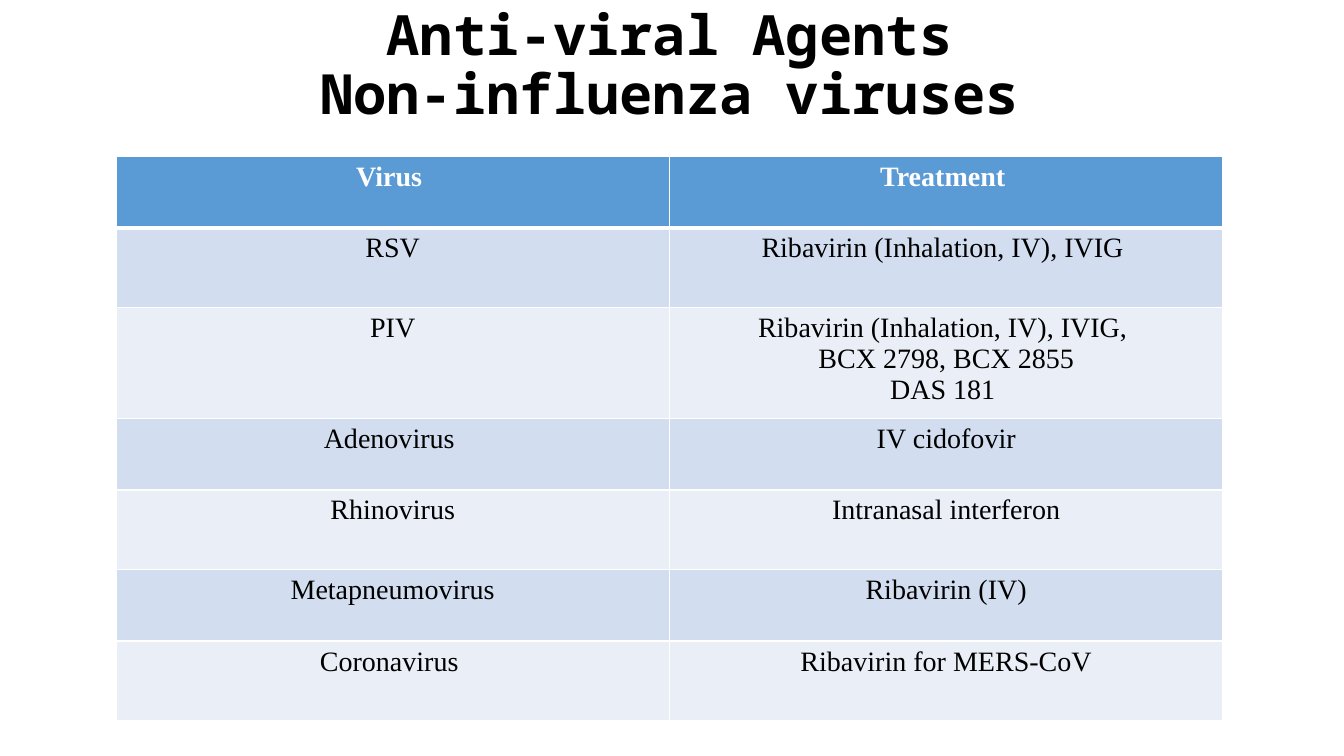
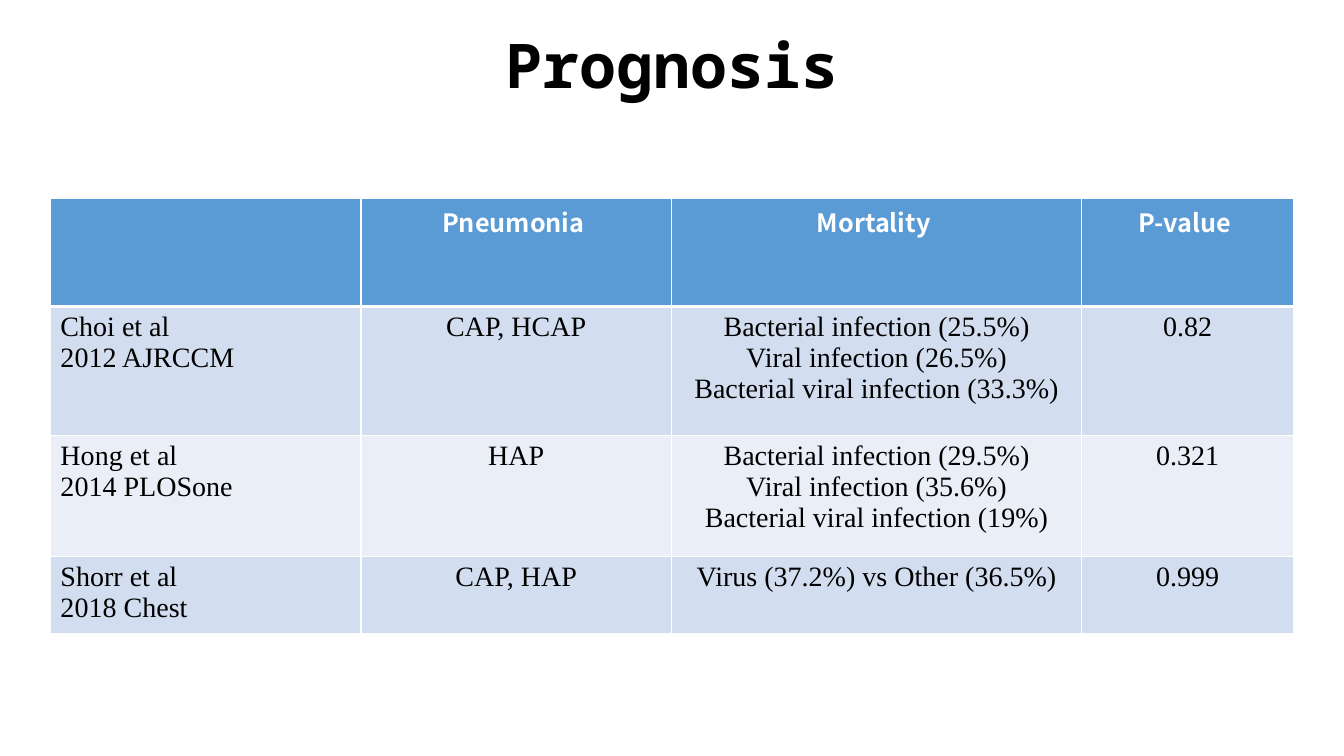
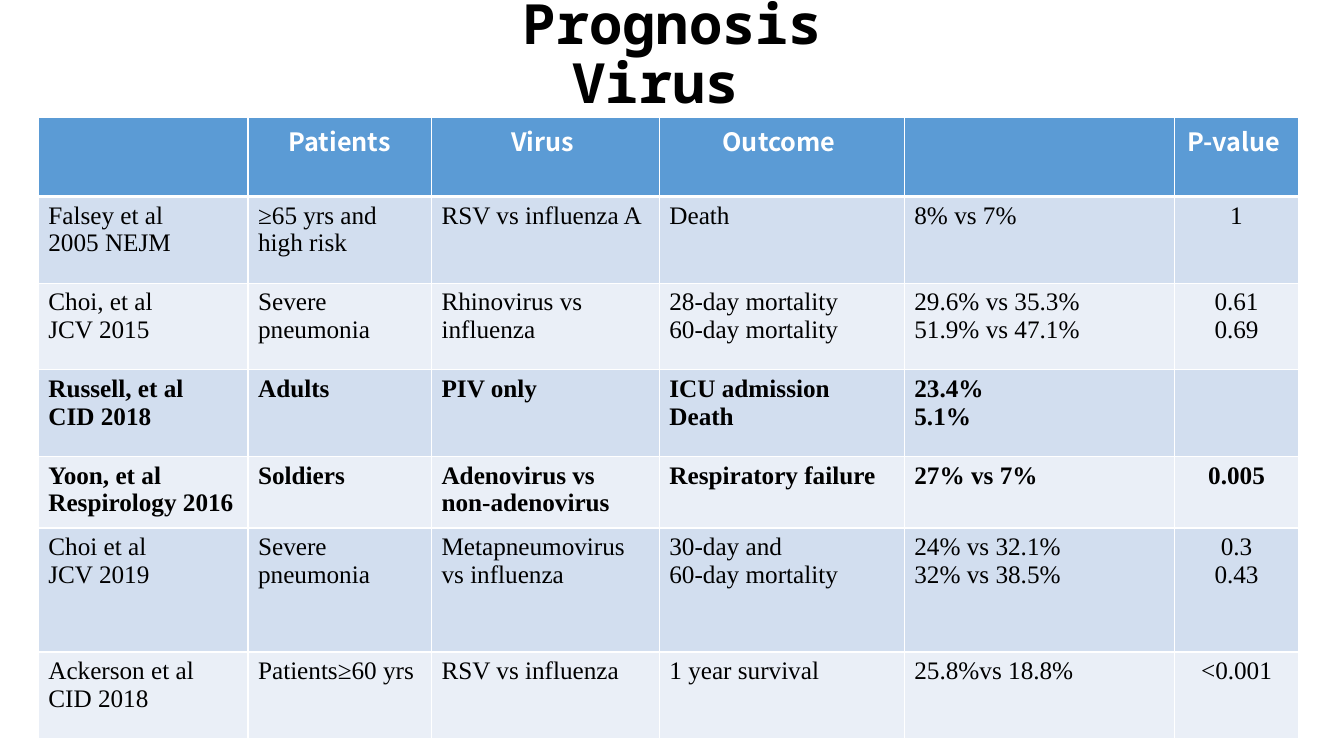
from dataclasses import dataclass

from lxml import etree
from pptx import Presentation
from pptx.dml.color import RGBColor
from pptx.enum.text import MSO_ANCHOR, PP_ALIGN
from pptx.oxml.ns import qn
from pptx.util import Emu, Pt

LEFT, MID = PP_ALIGN.LEFT, PP_ALIGN.CENTER
CENTER = MSO_ANCHOR.MIDDLE
SCALE = 9144  # EMU per px, 100 px to the inch


@dataclass(frozen=True)
class Theme:
    black: str = "000000"
    white: str = "FFFFFF"
    blue: str = "5B9BD5"
    bands: tuple = ("D2DEEF", "EAEFF7")
    mono: str = "Noto Sans Mono"
    sans: str = "Noto Sans CJK KR"
    serif: str = "Times New Roman"
    big: float = 44
    title: float = 39.6
    text: float = 20
    small: float = 18
    thin: float = 1
    thick: float = 3


def px(num):
    return Emu(num * SCALE)


class Deck:
    def __init__(self, theme):
        self.theme = theme
        self.prs = Presentation()
        self.prs.slide_width, self.prs.slide_height = px(1333), px(750)
        self.slide = None

    def page(self):
        self.slide = self.prs.slides.add_slide(self.prs.slide_layouts[6])

    def style(self, para, face, size, color, bold, align):
        para.alignment = align
        for run in para.runs:
            run.font.name, run.font.size, run.font.bold = face, Pt(size), bold
            run.font.color.rgb = RGBColor.from_string(color)

    def title(self, text, left, top, width, size):
        box = self.slide.shapes.add_textbox(px(left), px(top), px(width), px(111))
        frame = box.text_frame
        frame.word_wrap = True
        frame.vertical_anchor = CENTER
        para = frame.paragraphs[0]
        para.text = text
        para.line_spacing = 0.9
        self.style(para, self.theme.mono, size, self.theme.black, True, MID)

    def border(self, cell, row):
        props = cell._tc.get_or_add_tcPr()
        thick = {0: "lnB", 1: "lnT"}.get(row)
        for side in ("lnL", "lnR", "lnT", "lnB"):
            width = self.theme.thick if side == thick else self.theme.thin
            line = etree.SubElement(props, qn("a:" + side), w=str(Pt(width)))
            fill = etree.SubElement(line, qn("a:solidFill"))
            etree.SubElement(fill, qn("a:srgbClr"), val=self.theme.white)

    def table(self, left, top, cols, rows, cells, size, head, flush=0, strong=()):
        """head: face and size of the top row; flush: count of left-aligned columns."""
        t = self.theme
        grid = self.slide.shapes.add_table(
            len(rows), len(cols), px(left), px(top), px(sum(cols)), px(sum(rows))).table
        for col, width in zip(grid.columns, cols):
            col.width = px(width)
        for r, (high, line) in enumerate(zip(rows, cells)):
            grid.rows[r].height = px(high)
            if r == 0:
                fill, look = t.blue, (*head, t.white, True)
            else:
                fill = t.bands[(r - 1) % 2]
                look = (t.serif, size, t.black, r in strong)
            for c, text in enumerate(line):
                cell = grid.cell(r, c)
                self.border(cell, r)
                cell.fill.solid()
                cell.fill.fore_color.rgb = RGBColor.from_string(fill)
                cell.text_frame.text = text
                for para in cell.text_frame.paragraphs:
                    self.style(para, *look, LEFT if r and c < flush else MID)


AGENTS = [
    ("Virus ", "Treatment "),
    ("RSV", "Ribavirin (Inhalation, IV), IVIG "),
    ("PIV", "Ribavirin (Inhalation, IV), IVIG, \nBCX 2798, BCX 2855\nDAS 181 "),
    ("Adenovirus ", "IV cidofovir"),
    ("Rhinovirus", "Intranasal interferon"),
    ("Metapneumovirus", "Ribavirin (IV)"),
    ("Coronavirus ", "Ribavirin for MERS-CoV"),
]

DEATHS = [
    ("", "Pneumonia ", "Mortality ", "P-value "),
    ("Choi et al\n2012 AJRCCM", "CAP, HCAP",
     "Bacterial infection (25.5%)\nViral infection (26.5%)\n"
     "Bacterial viral infection (33.3%)", "0.82"),
    ("Hong et al\n2014 PLOSone", "HAP",
     "Bacterial infection (29.5%)\nViral infection (35.6%)\n"
     "Bacterial viral infection (19%)", "0.321"),
    ("Shorr et al\n2018 Chest", "CAP, HAP",
     "Virus (37.2%) vs Other (36.5%)", "0.999"),
]

TRIALS = [
    ("", "Patients", "Virus ", "Outcome ", "", "P-value "),
    ("Falsey et al\n2005 NEJM", "≥65 yrs and high risk", "RSV vs influenza A",
     "Death", "8% vs 7%", "1"),
    ("Choi, et al\nJCV 2015", "Severe pneumonia", "Rhinovirus vs influenza",
     "28-day mortality\n60-day mortality", "29.6% vs 35.3%\n51.9% vs 47.1%",
     "0.61\n0.69"),
    ("Russell, et al\nCID 2018", "Adults", "PIV only",
     "ICU admission\nDeath", "23.4%\n5.1%", ""),
    ("Yoon, et al\nRespirology 2016", "Soldiers", "Adenovirus vs non-adenovirus",
     "Respiratory failure", "27% vs 7%", "0.005"),
    ("Choi et al\nJCV 2019", "Severe pneumonia", "Metapneumovirus vs influenza",
     "30-day and\n60-day mortality", "24% vs 32.1%\n32% vs 38.5%", "0.3\n0.43"),
    ("Ackerson et al\nCID 2018", "Patients≥60 yrs", "RSV vs influenza",
     "1 year survival", "25.8%vs 18.8%", "<0.001"),
]


def main():
    t = Theme()
    deck = Deck(t)

    # Treatment by virus
    deck.page()
    deck.title("Anti-viral Agents\nNon-influenza viruses", 183, 11, 962, t.title)
    deck.table(115, 155, [549, 549], [71, 79, 79, 71, 79, 71, 79], AGENTS,
               t.text, (t.serif, t.text))

    # Mortality by kind of infection
    deck.page()
    deck.title("Prognosis", 189, 12, 956, t.big)
    deck.table(50, 197, [308, 308, 407, 210], [107, 128, 120, 68], DEATHS,
               t.text, (t.sans, t.small), flush=1)

    # Outcome by virus
    deck.page()
    deck.title("Prognosis\nVirus ", 189, 0, 956, t.title)
    deck.table(38, 116, [208, 182, 226, 243, 268, 123],
               [79, 86, 86, 86, 71, 123, 86], TRIALS,
               t.small, (t.sans, t.small), flush=5, strong=(3, 4))

    deck.prs.save("out.pptx")


if __name__ == "__main__":
    main()
